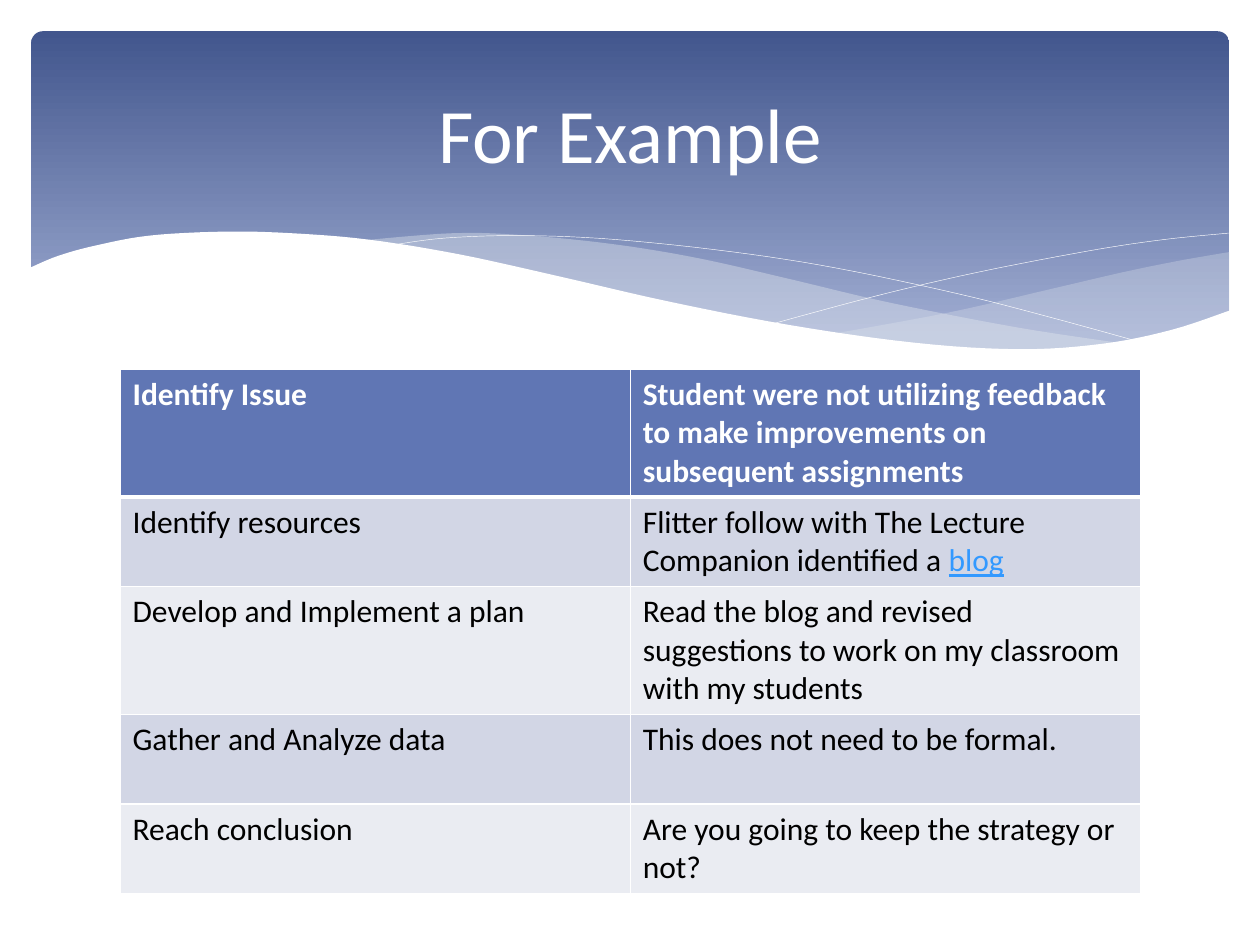
"""Build the "For Example" slide: a wave banner above a two-column table."""
from lxml import etree
from pptx import Presentation
from pptx import util as u
from pptx.dml.color import RGBColor
from pptx.enum import shapes, text
from pptx.oxml.ns import qn

HUES = {"deep": "42568D", "pale": "A0ADD2", "mist": "E4E9EF", "white": "FFFFFF",
        "head": "6076B4", "odd": "D2D6E5", "even": "EAECF2", "ink": "000000",
        "link": "3399FF"}

RIGHT = [
    [(24.79, 5.08), (23.75, 5.26), (22.63, 5.49), (21.13, 5.84), (19.13, 6.3),
     (16.79, 6.73)],
    [(16.79, 6.73), (18.26, 6.91), (19.84, 7.04), (21.44, 7.04), (22.78, 6.86),
     (23.93, 6.58), (24.79, 6.27)]]
LEFT = [
    [(22.68, 6.93), (20.5, 6.6), (17.93, 6.1), (15.98, 5.64), (14.1, 5.21),
     (12.42, 4.93), (10.67, 4.75), (9.17, 4.7), (7.26, 4.85)],
    [(7.26, 4.85), (9.19, 5.16), (11.4, 5.64), (13.46, 6.1), (15.7, 6.55),
     (17.65, 6.86), (19.63, 7.04), (21.29, 7.06), (22.68, 6.93)]]
FALL = [[(7.85, 4.95), (8.97, 4.8), (10.57, 4.75), (12.42, 4.83), (14.78, 5.08),
         (16.89, 5.41), (19.3, 5.92), (21.11, 6.38), (23.04, 6.91)]]
RISE = [[(15.57, 6.53), (17.65, 5.97), (19.71, 5.49), (22, 5.05), (23.47, 4.83),
         (24.77, 4.7)]]
FRONT = [
    [(24.82, 6.25), (23.62, 6.65), (22.23, 6.93), (20.55, 7.04), (18.44, 6.91),
     (15.9, 6.55), (13.44, 6.07), (11.35, 5.59), (9.27, 5.13), (7.42, 4.83),
     (5.84, 4.7), (4.5, 4.67), (3.02, 4.75), (1.93, 4.95), (1.17, 5.16), (0.58, 5.41)],
    [(0.58, 8.36), (24.82, 8.36)]]

ROWS = [
    ("Identify Issue",
     ["Student were not utilizing feedback to make improvements on subsequent assignments"]),
    ("Identify resources",
     ["Flitter follow with The Lecture Companion identified a ", "blog"]),
    ("Develop and Implement a plan",
     ["Read the blog and revised suggestions to work on my classroom with my students"]),
    ("Gather and Analyze data", ["This does not need to be formal."]),
    ("Reach conclusion", ["Are you going to keep the strategy or not?"])]
TALLS = [2.57, 1.8, 2.57, 1.8, 1.8]


def bend(knots, steps=6):
    """Return points on a smooth curve through the knots."""
    pads = [knots[0], *knots, knots[-1]]
    dots = [knots[0]]
    for a, b, c, d in zip(pads, pads[1:], pads[2:], pads[3:]):
        for k in range(1, steps + 1):
            t = k / steps
            dots.append(tuple(
                b[i] + t * (c[i] - a[i]) / 2
                + t * t * (2 * a[i] - 5 * b[i] + 4 * c[i] - d[i]) / 2
                + t ** 3 * (3 * b[i] - a[i] - 3 * c[i] + d[i]) / 2 for i in (0, 1)))
    return dots


class Deck:
    """Hold the style and the current slide."""

    font = "Calibri"

    def __init__(self):
        """Open a deck with one title slide."""
        self.prs = Presentation()
        self.prs.slide_width, self.prs.slide_height = u.Cm(25.4), u.Cm(19.05)
        self.slide = self.prs.slides.add_slide(self.prs.slide_layouts[5])

    def hue(self, name):
        """Return a named colour."""
        return RGBColor.from_string(HUES[name])

    def style(self, run, size, hue, bold=False):
        """Format one run."""
        run.font.name, run.font.size, run.font.bold = self.font, u.Pt(size), bold
        run.font.color.rgb = self.hue(hue)

    def panel(self, x, y, wide, tall):
        """Add the rounded gradient banner."""
        box = self.slide.shapes.add_shape(shapes.MSO_SHAPE.ROUNDED_RECTANGLE,
                                          u.Cm(x), u.Cm(y), u.Cm(wide), u.Cm(tall))
        box.adjustments[0] = 0.034
        box.shadow.inherit = False
        box.line.fill.background()
        box.fill.gradient()
        box.fill.gradient_angle = 270
        for stop, place, hue in zip(box.fill.gradient_stops, (0, 0.9), ("deep", "pale")):
            stop.position, stop.color.rgb = place, self.hue(hue)

    def wave(self, curves, hue, alpha=100, closed=True):
        """Add a filled wave or an open wave line."""
        dots = [(u.Cm(x), u.Cm(y)) for curve in curves for x, y in bend(curve)]
        path = self.slide.shapes.build_freeform(*dots[0])
        path.add_line_segments(dots[1:], close=closed)
        form = path.convert_to_shape()
        form.shadow.inherit = False
        if not closed:
            form.fill.background()
            form.line.color.rgb, form.line.width = self.hue(hue), u.Pt(0.25)
            return
        form.line.fill.background()
        form.fill.solid()
        form.fill.fore_color.rgb = self.hue(hue)
        if alpha < 100:
            tint = form.element.spPr.find(f"{qn('a:solidFill')}/{qn('a:srgbClr')}")
            etree.SubElement(tint, qn("a:alpha"), val=str(alpha * 1000))

    def edge(self, cell, top, base):
        """Draw white borders round a cell."""
        props = cell._tc.get_or_add_tcPr()
        for side, wide in zip("LRTB", (1, 1, top, base)):
            line = etree.SubElement(props, qn(f"a:ln{side}"), w=str(u.Pt(wide)))
            fill = etree.SubElement(line, qn("a:solidFill"))
            etree.SubElement(fill, qn("a:srgbClr"), val=HUES["white"])

    def cell(self, cell, parts, row):
        """Fill and format one cell; a second part looks like a link."""
        self.edge(cell, 3 if row == 1 else 1, 3 if row == 0 else 1)
        cell.fill.solid()
        cell.fill.fore_color.rgb = self.hue("head" if row == 0 else "odd" if row % 2 else "even")
        para = cell.text_frame.paragraphs[0]
        for k, part in enumerate(parts):
            run = para.add_run()
            run.text = part
            self.style(run, 18, "link" if k else "ink" if row else "white", row == 0)
            if k:
                run.font.underline = True

    def table(self, x, y, wide, rows, talls):
        """Add the two-column table."""
        grid = self.slide.shapes.add_table(len(rows), 2, u.Cm(x), u.Cm(y),
                                           u.Cm(wide), u.Cm(sum(talls))).table
        for k, (left, right) in enumerate(rows):
            grid.rows[k].height = u.Cm(talls[k])
            self.cell(grid.cell(k, 0), [left], k)
            self.cell(grid.cell(k, 1), right, k)

    def title(self, words, x, y, wide, tall):
        """Set the title and bring it to the front."""
        box = self.slide.shapes.title
        box.left, box.top, box.width, box.height = map(u.Cm, (x, y, wide, tall))
        box.text_frame.text = words
        box.text_frame.vertical_anchor = text.MSO_ANCHOR.MIDDLE
        para = box.text_frame.paragraphs[0]
        para.alignment = text.PP_ALIGN.CENTER
        self.style(para.runs[0], 44, "white")
        box.element.getparent().append(box.element)


def main():
    """Build and save the slide."""
    deck = Deck()
    deck.panel(0.63, 0.63, 24.15, 6.86)
    deck.wave(RIGHT, "mist", 29)
    deck.wave(LEFT, "mist", 40)
    deck.wave(FALL, "white", closed=False)
    deck.wave(RISE, "white", closed=False)
    deck.wave(FRONT, "white")
    deck.table(2.42, 7.44, 20.57, ROWS, TALLS)
    deck.title("For Example", 1.27, 0.94, 22.86, 3.48)
    deck.prs.save("out.pptx")


if __name__ == "__main__":
    main()
